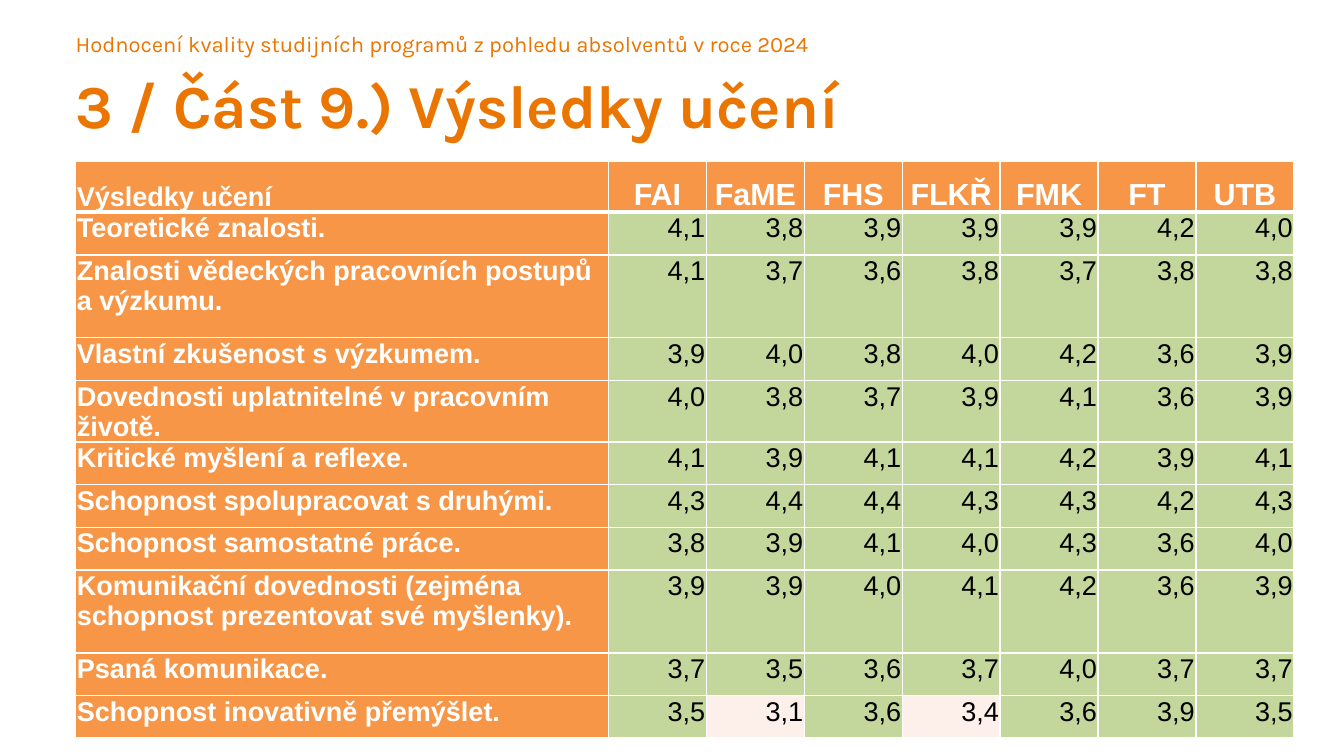
from lxml import etree
from pptx import Presentation, util as u
from pptx.dml.color import RGBColor
from pptx.enum import text
from pptx.oxml import ns

COLORS = {"brand": "EA7500", "label": "F79646", "high": "C3D69B",
          "low": "FDEFE9", "white": "FFFFFF", "black": "000000"}
LOW_LIMIT = 3.5
LEFT = u.Inches(0.62)
FACULTIES = ["FAI", "FaME", "FHS", "FLKŘ", "FMK", "FT", "UTB"]
RESULTS = {
    "Teoretické znalosti.": "4,1 3,8 3,9 3,9 3,9 4,2 4,0",
    "Znalosti vědeckých pracovních postupů a výzkumu.": "4,1 3,7 3,6 3,8 3,7 3,8 3,8",
    "Vlastní zkušenost s výzkumem.": "3,9 4,0 3,8 4,0 4,2 3,6 3,9",
    "Dovednosti uplatnitelné v pracovním životě.": "4,0 3,8 3,7 3,9 4,1 3,6 3,9",
    "Kritické myšlení a reflexe.": "4,1 3,9 4,1 4,1 4,2 3,9 4,1",
    "Schopnost spolupracovat s druhými.": "4,3 4,4 4,4 4,3 4,3 4,2 4,3",
    "Schopnost samostatné práce.": "3,8 3,9 4,1 4,0 4,3 3,6 4,0",
    "Komunikační dovednosti (zejména schopnost prezentovat své myšlenky).":
        "3,9 3,9 4,0 4,1 4,2 3,6 3,9",
    "Psaná komunikace.": "3,7 3,5 3,6 3,7 4,0 3,7 3,7",
    "Schopnost inovativně přemýšlet.": "3,5 3,1 3,6 3,4 3,6 3,9 3,5",
}
TALL_ROWS = (2, 8)


def write(frame, content, font, size, color, bold=False, align=text.PP_ALIGN.LEFT):
    """Fill a text frame with one formatted paragraph."""
    frame.text = content
    para = frame.paragraphs[0]
    para.alignment = align
    span = para.runs[0].font
    span.name, span.size, span.bold = font, u.Pt(size), bold
    span.color.rgb = RGBColor.from_string(COLORS[color])
    return para


def add_borders(cell, widths):
    """Draw white cell borders; widths maps each side (L, R, T, B) to points."""
    properties = cell._tc.get_or_add_tcPr()
    for side, width in widths.items():
        line = etree.SubElement(properties, ns.qn(f"a:ln{side}"), w=str(u.Pt(width)))
        fill = etree.SubElement(line, ns.qn("a:solidFill"))
        etree.SubElement(fill, ns.qn("a:srgbClr"), val=COLORS["white"])


deck = Presentation()
deck.slide_width, deck.slide_height = u.Inches(11.02), u.Inches(6.2)
page = deck.slides.add_slide(deck.slide_layouts.get_by_name("Title Only"))

# Headings
title = page.shapes.title
title.left, title.top = LEFT, u.Inches(0.55)
title.width, title.height = u.Inches(10.18), u.Inches(0.6)
kicker = page.shapes.add_textbox(LEFT, u.Inches(0.25), u.Inches(9.92), u.Inches(0.22))
headings = [(kicker, "Hodnocení kvality studijních programů z pohledu absolventů v roce 2024", 13, False),
            (title, "3 / Část 9.) Výsledky učení", 36, True)]
for box, content, size, bold in headings:
    frame = box.text_frame
    frame.margin_left = frame.margin_right = frame.margin_top = frame.margin_bottom = 0
    frame.word_wrap = True
    frame.auto_size = text.MSO_AUTO_SIZE.NONE
    frame.vertical_anchor = text.MSO_ANCHOR.TOP
    write(frame, content, "Karla", size, "brand", bold)

# Table grid
rows = [["Výsledky učení", *FACULTIES]]
rows += [[label, *values.split()] for label, values in RESULTS.items()]
table_width, label_width = u.Inches(9.99), u.Inches(4.37)
table = page.shapes.add_table(len(rows), len(rows[0]), LEFT, u.Inches(1.32),
                              table_width, u.Inches(4.58)).table
table.horz_banding = False
table.first_col = True
for index, column in enumerate(table.columns):
    column.width = label_width if index == 0 else (table_width - label_width) // len(FACULTIES)
for index, row in enumerate(table.rows):
    row.height = u.Inches(0.42 if index == 0 else 0.68 if index in TALL_ROWS else 0.35)

# Table contents
for r, row in enumerate(rows):
    for c, content in enumerate(row):
        cell = table.cell(r, c)
        is_header, is_label = r == 0, c == 0
        is_faculty = is_header and not is_label
        is_score = not (is_header or is_label)

        cell.margin_left = cell.margin_right = u.Inches(0.05 if is_faculty else 0.01)
        cell.margin_top = u.Inches(0 if is_faculty else 0.01)
        cell.margin_bottom = 0
        cell.vertical_anchor = text.MSO_ANCHOR.BOTTOM if is_header else text.MSO_ANCHOR.TOP

        align = (text.PP_ALIGN.CENTER if is_faculty else
                 text.PP_ALIGN.RIGHT if is_score else text.PP_ALIGN.LEFT)
        para = write(cell.text_frame, content, "Arial", 18 if is_faculty else 16,
                     "black" if is_score else "white", not is_score, align)
        if is_faculty:
            para.line_spacing = 1.5

        add_borders(cell, {"L": 1, "R": 1, "T": 3 if r == 1 else 1, "B": 3 if is_header else 1})
        color = "label"
        if is_score:
            color = "low" if float(content.replace(",", ".")) < LOW_LIMIT else "high"
        cell.fill.solid()
        cell.fill.fore_color.rgb = RGBColor.from_string(COLORS[color])

deck.save("out.pptx")
